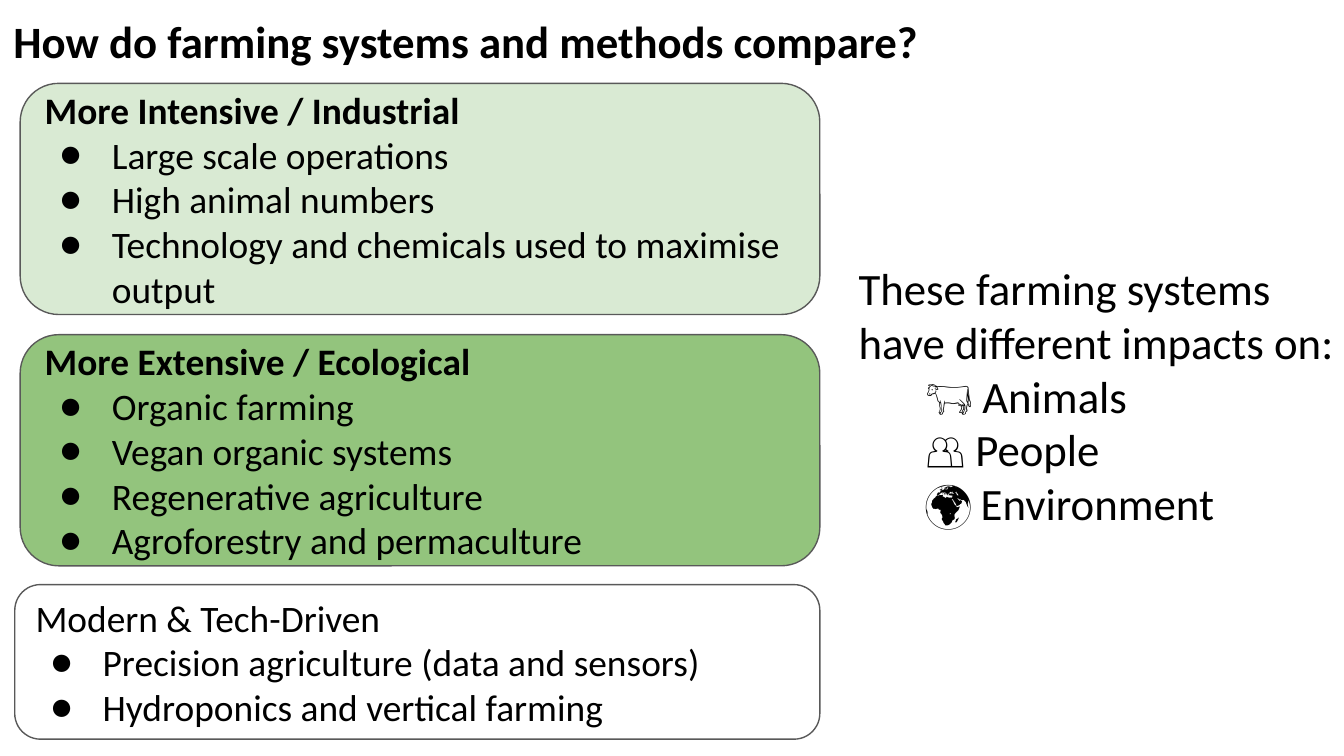
from dataclasses import dataclass
from lxml.etree import SubElement
from pptx import Presentation
from pptx.dml.color import RGBColor
from pptx.enum.shapes import MSO_SHAPE
from pptx.enum.text import MSO_ANCHOR, MSO_AUTO_SIZE, PP_ALIGN
from pptx.oxml.ns import qn
from pptx.util import Inches, Pt


@dataclass(frozen=True)
class Theme:
    font: str = "Calibri"
    ink: str = "000000"
    outline: str = "595959"
    pale_green: str = "D9EAD3"
    green: str = "93C47D"
    white: str = "FFFFFF"
    large: int = 24
    body: int = 20


class SlideBuilder:
    def __init__(self, s, theme):
        self.s = s
        self.theme = theme

    def place(self, box):
        return [Inches(v) for v in box]

    def frame(self, sp, anchor):
        tf = sp.text_frame
        tf.word_wrap = True
        tf.auto_size = MSO_AUTO_SIZE.NONE
        tf.vertical_anchor = anchor
        tf.margin_left = tf.margin_right = Inches(0.1)
        tf.margin_top = tf.margin_bottom = Inches(0.1)
        return tf

    def format(self, p, size, bold=False):
        p.alignment = PP_ALIGN.LEFT
        for r in p.runs:
            r.font.name = self.theme.font
            r.font.size = Pt(size)
            r.font.bold = bold
            r.font.color.rgb = RGBColor.from_string(self.theme.ink)

    def indent(self, p, bullet=False):
        pPr = p._p.get_or_add_pPr()
        pPr.set("marL", str(Inches(0.5)))
        pPr.set("indent", str(Inches(-0.39) if bullet else 0))
        if bullet:
            color = SubElement(pPr, qn("a:buClr"))
            SubElement(color, qn("a:srgbClr"), val=self.theme.ink)
            SubElement(pPr, qn("a:buFont"), typeface=self.theme.font)
            SubElement(pPr, qn("a:buChar"), char="●")

    def fill_text(self, tf, heading, items, size, bold=False, bullet=False):
        tf.text = heading
        self.format(tf.paragraphs[0], size, bold)
        for item in items:
            p = tf.add_paragraph()
            p.text = item
            self.indent(p, bullet)
            self.format(p, size)

    def title(self, text, box):
        sp = self.s.shapes.title
        sp.left, sp.top, sp.width, sp.height = self.place(box)
        tf = self.frame(sp, MSO_ANCHOR.TOP)
        self.fill_text(tf, text, [], self.theme.large, bold=True)

    def card(self, heading, items, box, fill, bold=True):
        sp = self.s.shapes.add_shape(MSO_SHAPE.ROUNDED_RECTANGLE, *self.place(box))
        sp.shadow.inherit = False
        sp.fill.solid()
        sp.fill.fore_color.rgb = RGBColor.from_string(fill)
        sp.line.color.rgb = RGBColor.from_string(self.theme.outline)
        sp.line.width = Pt(0.75)
        tf = self.frame(sp, MSO_ANCHOR.MIDDLE)
        self.fill_text(tf, heading, items, self.theme.body, bold, bullet=True)

    def text(self, heading, items, box):
        sp = self.s.shapes.add_textbox(*self.place(box))
        tf = self.frame(sp, MSO_ANCHOR.TOP)
        self.fill_text(tf, heading, items, self.theme.large)


def main():
    prs = Presentation()
    prs.slide_width = Inches(10)
    prs.slide_height = prs.slide_width * 9 // 16
    theme = Theme()
    slide = SlideBuilder(prs.slides.add_slide(prs.slide_layouts[5]), theme)

    slide.title("How do farming systems and methods compare?", (0, 0, 9.95, 1.01))
    slide.card(
        "More Intensive / Industrial",
        ["Large scale operations", "High animal numbers",
         "Technology and chemicals used to maximise output"],
        (0.15, 0.62, 5.95, 1.72), theme.pale_green)
    slide.card(
        "More Extensive / Ecological",
        ["Organic farming", "Vegan organic systems",
         "Regenerative agriculture", "Agroforestry and permaculture"],
        (0.15, 2.49, 5.95, 1.72), theme.green)
    slide.card(
        "Modern & Tech-Driven",
        ["Precision agriculture (data and sensors)",
         "Hydroponics and vertical farming"],
        (0.11, 4.35, 5.99, 1.15), theme.white, bold=False)
    slide.text(
        "These farming systems have different impacts on:",
        ["🐄 Animals", "👥 People", "🌍 Environment"],
        (6.29, 1.84, 3.77, 2.22))

    prs.save("out.pptx")


if __name__ == "__main__":
    main()
